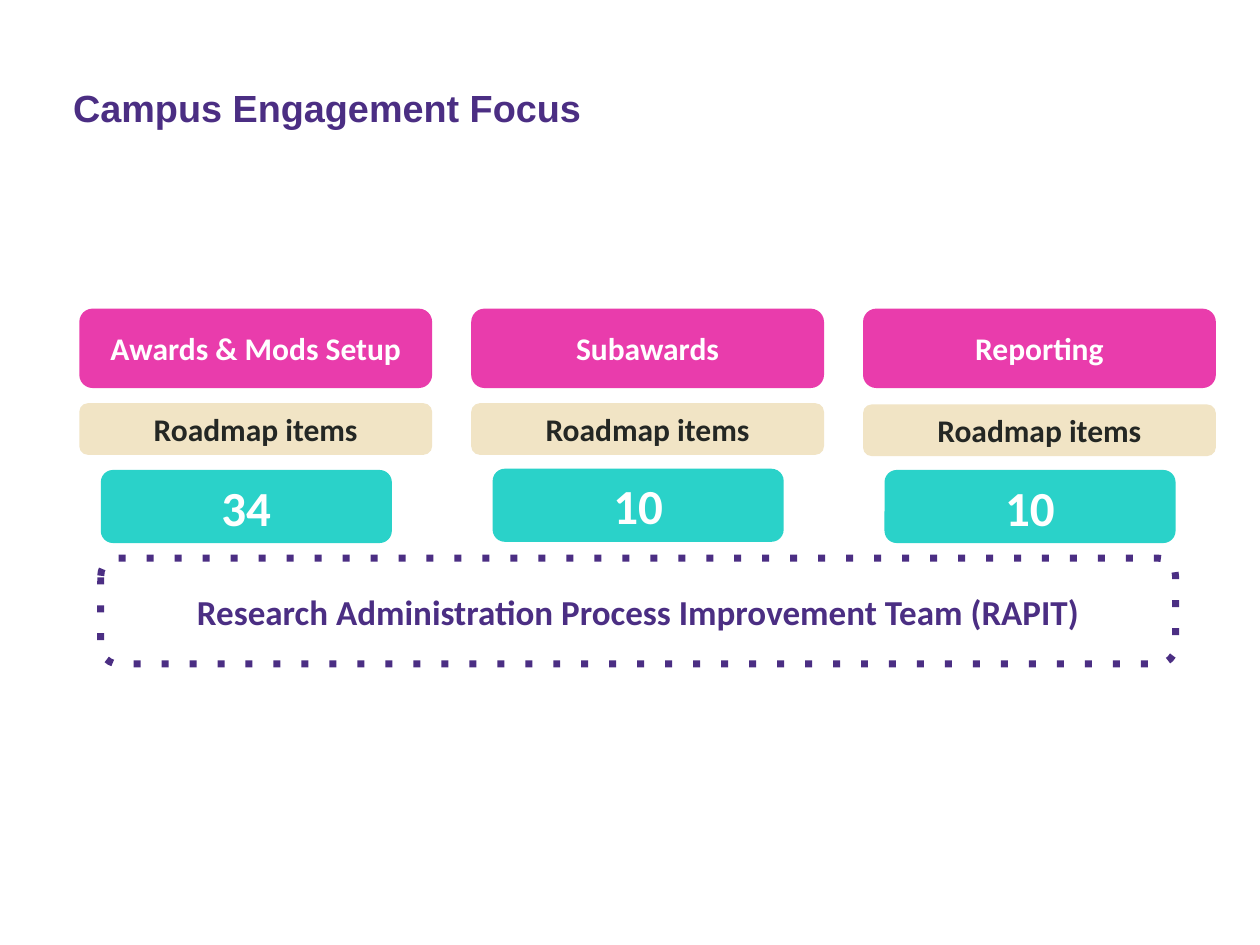
from dataclasses import dataclass

from pptx import Presentation
from pptx.dml.color import RGBColor
from pptx.enum.dml import MSO_LINE
from pptx.enum.shapes import MSO_SHAPE
from pptx.enum.text import MSO_ANCHOR, PP_ALIGN
from pptx.util import Inches, Pt

ROUNDED = MSO_SHAPE.ROUNDED_RECTANGLE
CENTER = PP_ALIGN.CENTER
MIDDLE, BOTTOM = MSO_ANCHOR.MIDDLE, MSO_ANCHOR.BOTTOM
DOTTED = MSO_LINE.ROUND_DOT

PURPLE = RGBColor(0x4B, 0x2E, 0x83)
PINK = RGBColor(0xE9, 0x3C, 0xAC)
SAND = RGBColor(0xF1, 0xE4, 0xC5)
TEAL = RGBColor(0x2A, 0xD2, 0xC9)
DARK = RGBColor(0x24, 0x27, 0x24)
WHITE = RGBColor(0xFF, 0xFF, 0xFF)

COLUMN_LEFT, COLUMN_STEP = 0.63, 3.11


@dataclass(frozen=True)
class Row:
    labels: tuple[str, ...]
    tops: tuple[float, ...]
    indent: float
    width: float
    height: float
    fill: RGBColor
    color: RGBColor
    size: float


ROWS = (
    Row(("Awards & Mods Setup", "Subawards", "Reporting"), (2.45, 2.45, 2.45),
        0, 2.8, 0.63, PINK, WHITE, 18),
    Row(("Roadmap items",) * 3, (3.2, 3.2, 3.21),
        0, 2.8, 0.41, SAND, DARK, 18),
    Row(("34", "10", "10"), (3.73, 3.72, 3.73),
        0.17, 2.31, 0.58, TEAL, WHITE, 28),
)


def write(s, text: str, font: str, size: float, color: RGBColor, anchor, align=None) -> None:
    tf = s.text_frame
    tf.word_wrap = True
    tf.vertical_anchor = anchor
    tf.margin_left = tf.margin_right = Inches(0.13)
    tf.margin_top = tf.margin_bottom = Inches(0.07)
    tf.text = text
    p = tf.paragraphs[0]
    p.alignment = align
    f = p.runs[0].font
    f.name, f.size, f.bold = font, Pt(size), True
    f.color.rgb = color


def add_box(slide, box: tuple[float, ...], text: str, size: float, color: RGBColor,
            fill: RGBColor | None = None):
    s = slide.shapes.add_shape(ROUNDED, *map(Inches, box))
    s.shadow.inherit = False
    s.line.fill.background()
    if fill is None:
        s.fill.background()
    else:
        s.fill.solid()
        s.fill.fore_color.rgb = fill
    write(s, text, "Calibri", size, color, MIDDLE, CENTER)
    return s


def add_row(slide, row: Row) -> None:
    for column, (label, top) in enumerate(zip(row.labels, row.tops)):
        left = COLUMN_LEFT + column * COLUMN_STEP + row.indent
        add_box(slide, (left, top, row.width, row.height), label,
                row.size, row.color, row.fill)


def add_team(slide) -> None:
    s = add_box(slide, (0.8, 4.43, 8.53, 0.84),
                "Research Administration Process Improvement Team (RAPIT)", 20, PURPLE)
    s.line.color.rgb = PURPLE
    s.line.width = Pt(4)
    s.line.dash_style = DOTTED
    # The widely spaced "dot" preset has no enum member
    s.element.xpath(".//a:prstDash")[0].set("val", "dot")


def main() -> None:
    prs = Presentation()
    prs.slide_width, prs.slide_height = Inches(10), Inches(7.5)
    slide = prs.slides.add_slide(prs.slide_layouts[6])
    title = slide.shapes.add_textbox(*map(Inches, (0.45, 0.6, 9.25, 0.5)))
    write(title, "Campus Engagement Focus", "Arial", 21.6, PURPLE, BOTTOM)
    for row in ROWS:
        add_row(slide, row)
    add_team(slide)
    prs.save("out.pptx")


if __name__ == "__main__":
    main()
